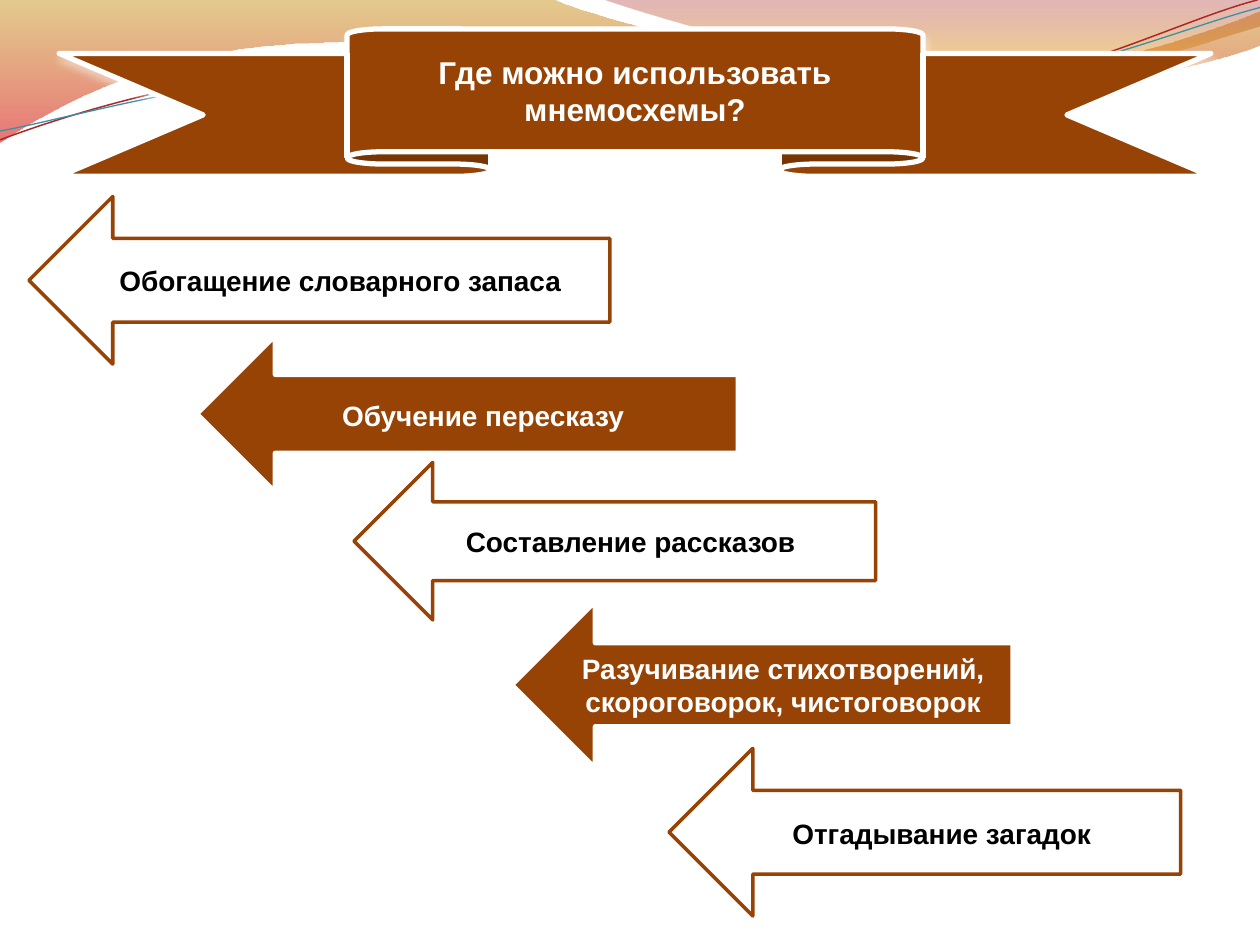
from lxml import etree
from pptx import Presentation
from pptx.dml.color import RGBColor
from pptx.enum.shapes import MSO_SHAPE
from pptx.enum.text import MSO_ANCHOR, PP_ALIGN
from pptx.oxml.ns import qn
from pptx.util import Inches, Pt

RIBBON = MSO_SHAPE.UP_RIBBON
ARROW = MSO_SHAPE.LEFT_ARROW
MIDDLE = MSO_ANCHOR.MIDDLE
CENTER = PP_ALIGN.CENTER

BROWN = RGBColor(0x96, 0x43, 0x05)
WHITE = RGBColor(0xFF, 0xFF, 0xFF)
BLACK = RGBColor(0x00, 0x00, 0x00)
OCHRE = RGBColor(0xC3, 0x8B, 0x00)
RED = RGBColor(0xD6, 0x03, 0x05)
WINE = RGBColor(0xA1, 0x11, 0x12)
AMBER = RGBColor(0xE9, 0xA6, 0x00)
CRIMSON = RGBColor(0xAC, 0x28, 0x29)
TEAL = RGBColor(0x38, 0x91, 0xA7)

GAP = chr(160)  # no-break space
TITLE = "Где можно использовать мнемосхемы?"
# Text, serif tail, left, top, width, height, solid
ARROWS = [
    ("Обогащение словарного запаса", "", 0.23, 1.56, 4.61, 1.33, False),
    ("Обучение пересказу", GAP, 1.56, 2.66, 4.3, 1.25, True),
    ("Составление рассказов" + GAP, "", 2.81, 3.67, 4.14, 1.25, False),
    ("Разучивание стихотворений, скороговорок, чистоговорок", "",
     4.06, 4.77, 3.98, 1.33, True),
    ("Отгадывание загадок", GAP, 5.31, 5.94, 4.06, 1.33, False),
]

# A pair is a straight step; six numbers are a Bezier curve.
LEFT_WAVE = [
    (0, 0), (4.4, 0), (4.76, 0.17, 6.64, 0.63, 7.58, 0.63),
    (8.53, 0.63, 9.58, 0.26, 10, 0.09), (10, 0.36),
    (9.83, 0.44, 8.7, 0.76, 7.46, 0.75), (6.22, 0.75, 3.82, 0.28, 2.57, 0.34),
    (1.29, 0.36, 0.46, 0.83, 0, 1.13),
]
RIGHT_WAVE = [
    (4.79, 0), (5.09, 0.11, 6.82, 0.62, 7.69, 0.65),
    (8.56, 0.69, 9.61, 0.32, 10, 0.21), (10, 0),
]
RED_LINE = [
    (0, 1.11), (0.48, 0.93, 1.58, 0.57, 2.77, 0.52),
    (3.95, 0.47, 5.93, 0.89, 7.13, 0.8), (8.33, 0.71, 9.38, 0.15, 9.98, 0),
]
TEAL_LINE = [
    (0, 1.04), (0.47, 0.96, 1.64, 0.61, 2.83, 0.56),
    (4.03, 0.51, 5.97, 0.84, 7.17, 0.75), (8.36, 0.67, 9.41, 0.21, 10, 0.06),
]


def bend(shape, line, step):
    """Replace a straight step of the outline by a Bezier curve."""
    curve = etree.Element(qn("a:cubicBezTo"))
    for x, y in zip(step[::2], step[1::2]):
        etree.SubElement(
            curve, qn("a:pt"),
            x=str(Inches(x) - shape.left), y=str(Inches(y) - shape.top))
    line.getparent().replace(line, curve)


def add_outline(slide, steps, close):
    ends = [(Inches(step[-2]), Inches(step[-1])) for step in steps]
    pen = slide.shapes.build_freeform(*ends[0])
    pen.add_line_segments(ends[1:], close=close)
    shape = pen.convert_to_shape()
    shape.shadow.inherit = False
    lines = list(shape.element.spPr.iter(qn("a:lnTo")))
    for line, step in zip(lines, steps[1:]):
        if len(step) == 6:
            bend(shape, line, step)
    return shape


def set_alpha(color, percent):
    etree.SubElement(color, qn("a:alpha"), val=str(percent * 1000))


def add_wave(slide, steps, stops):
    """Add a closed shape with a see-through gradient from top to bottom."""
    shape = add_outline(slide, steps, True)
    shape.line.fill.background()
    fill = shape.fill
    fill.gradient()
    fill.gradient_angle = 270
    for stop, (place, color, alpha) in zip(fill.gradient_stops, stops):
        stop.position = place
        stop.color.rgb = color
    marks = shape.element.spPr.iter(qn("a:srgbClr"))
    for mark, (place, color, alpha) in zip(marks, stops):
        set_alpha(mark, alpha)


def add_curve(slide, steps, color, width):
    shape = add_outline(slide, steps, False)
    shape.fill.background()
    shape.line.color.rgb = color
    shape.line.width = Pt(width)


def add_glow(shape):
    """Add a soft white shadow just below the shape."""
    effects = shape.element.spPr.find(qn("a:effectLst"))
    outer = etree.SubElement(
        effects, qn("a:outerShdw"), blurRad=str(Pt(4.5)), dist=str(Pt(3)),
        dir="5400000", rotWithShape="0")
    set_alpha(etree.SubElement(outer, qn("a:srgbClr"), val=str(WHITE)), 48)


def add_block(slide, kind, box, solid):
    """Add a brown shape with a white edge, or a white one with a brown edge."""
    shape = slide.shapes.add_shape(kind, *map(Inches, box))
    shape.shadow.inherit = False
    shape.fill.solid()
    shape.fill.fore_color.rgb = BROWN if solid else WHITE
    shape.line.color.rgb = WHITE if solid else BROWN
    shape.line.width = Pt(3 if solid else 2)
    if solid:
        add_glow(shape)
    return shape


def style(run, name, size, bold, color):
    font = run.font
    font.name = name
    font.size = Pt(size)
    font.bold = bold
    font.color.rgb = color


def set_text(shape, text, size, color, tail=""):
    frame = shape.text_frame
    frame.text = text
    frame.word_wrap = True
    frame.vertical_anchor = MIDDLE
    para = frame.paragraphs[0]
    para.alignment = CENTER
    style(para.runs[0], "Arial", size, True, color)
    if tail:
        run = para.add_run()
        run.text = tail
        style(run, "TeX Gyre Pagella", 18, False, color)


def main():
    deck = Presentation()
    deck.slide_width, deck.slide_height = Inches(10), Inches(7.5)
    slide = deck.slides.add_slide(deck.slide_layouts[6])

    add_wave(slide, LEFT_WAVE, [(0, OCHRE, 45), (1, RED, 55)])
    add_wave(slide, RIGHT_WAVE, [(0, WINE, 30), (0.8, AMBER, 45)])
    add_curve(slide, RED_LINE, CRIMSON, 0.85)
    add_curve(slide, TEAL_LINE, TEAL, 0.75)

    ribbon = add_block(slide, RIBBON, (0.47, 0.23, 9.14, 1.17), True)
    set_text(ribbon, TITLE, 18, WHITE)
    for text, tail, *box, solid in ARROWS:
        arrow = add_block(slide, ARROW, box, solid)
        set_text(arrow, text, 16, WHITE if solid else BLACK, tail)

    deck.save("out.pptx")


if __name__ == "__main__":
    main()
